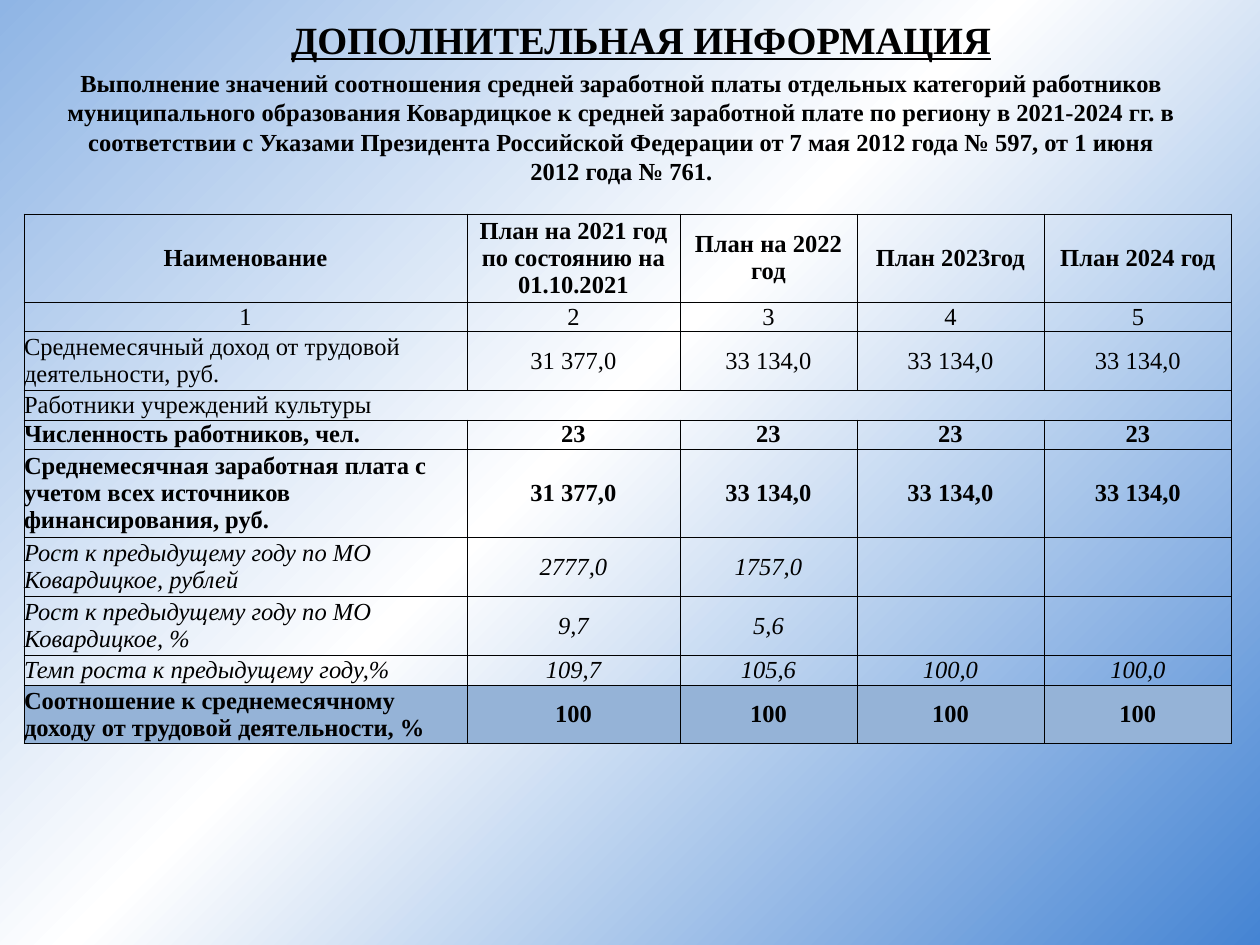
import copy
from dataclasses import dataclass

import pptx
import pptx.dml.color
import pptx.enum.text
import pptx.oxml
import pptx.oxml.ns
import pptx.util

Align = pptx.enum.text.PP_ALIGN
Anchor = pptx.enum.text.MSO_ANCHOR
Rgb = pptx.dml.color.RGBColor.from_string
Pt = pptx.util.Pt


@dataclass(frozen=True)
class Theme:
    font: str = "Times New Roman"
    ink: str = "000000"
    band: str = "95B3D7"
    glow: tuple = ((0, "8FB5E5"), (0.46, "FFFFFF"), (1, "4584D3"))
    head: int = 22
    text: int = 14
    lead: float = 16.75
    tight: float = 15.4
    rule: float = 0.5


@dataclass(frozen=True)
class Row:
    cells: tuple
    lines: int = 1
    bold: bool = False
    slant: bool = False
    mid: bool = False
    span: bool = False
    fill: str = ""


THEME = Theme()
COLS = (443, 213, 177, 187, 188)
TALL = 530  # height of the whole table, shared out by text lines
PLAN = ("31 377,0",) + ("33 134,0",) * 3
ROWS = (
    Row(("Наименование", "План на 2021 год по состоянию на 01.10.2021",
         "План на 2022 год", "План 2023год", "План 2024 год"),
        lines=3, bold=True, mid=True),
    Row(("1", "2", "3", "4", "5"), mid=True),
    Row(("Среднемесячный доход от трудовой деятельности, руб.", *PLAN), lines=2),
    Row(("Работники учреждений культуры",), span=True),
    Row(("Численность работников, чел.",) + ("23",) * 4, bold=True),
    Row(("Среднемесячная заработная плата с учетом всех источников "
         "финансирования, руб.", *PLAN), lines=3, bold=True),
    Row(("Рост к предыдущему году по МО Ковардицкое, рублей",
         "2777,0", "1757,0"), lines=2, slant=True),
    Row(("Рост к предыдущему году по МО Ковардицкое, %", "9,7", "5,6"),
        lines=2, slant=True),
    Row(("Темп роста к предыдущему году,%", "109,7", "105,6", "100,0", "100,0"),
        slant=True),
    Row(("Соотношение к среднемесячному доходу от трудовой деятельности, %",)
        + ("100",) * 4, lines=2, bold=True, fill=THEME.band),
)


def px(size: float) -> int:
    return round(size * 914400 / 126)


def write(frame, text: str, size: int, align, bold=False, slant=False,
          line=False, lead=None) -> None:
    """Set one paragraph of text and format it."""
    frame.word_wrap = True
    frame.text = text
    para = frame.paragraphs[0]
    para.alignment = align
    if lead:
        para.line_spacing = Pt(lead)
    for run in para.runs:
        font = run.font
        font.name, font.size = THEME.font, Pt(size)
        font.bold, font.italic, font.underline = bold, slant, line
        font.color.rgb = Rgb(THEME.ink)


def paint(slide) -> None:
    """Fill the background with a diagonal gradient."""
    fill = slide.background.fill
    fill.gradient()
    fill.gradient_angle = 315
    stops = slide.element.xpath(".//a:gsLst")[0]
    stops.insert(1, copy.deepcopy(stops[0]))
    for stop, (spot, tone) in zip(fill.gradient_stops, THEME.glow):
        stop.position = spot
        stop.color.rgb = Rgb(tone)


def frame_cell(cell) -> None:
    """Draw a thin line on each side of a cell."""
    props = cell._tc.get_or_add_tcPr()
    for side in "LRTB":
        props.append(pptx.oxml.parse_xml(
            f'<a:ln{side} {pptx.oxml.ns.nsdecls("a")} w="{Pt(THEME.rule)}">'
            f'<a:solidFill><a:srgbClr val="{THEME.ink}"/></a:solidFill>'
            f'</a:ln{side}>'))


def fill_row(cells, row: Row) -> None:
    for spot, cell in enumerate(cells):
        frame_cell(cell)
        if row.fill:
            cell.fill.solid()
            cell.fill.fore_color.rgb = Rgb(row.fill)
        else:
            cell.fill.background()
        cell.margin_left = cell.margin_right = 0
        cell.margin_top = cell.margin_bottom = 0
        cell.vertical_anchor = Anchor.MIDDLE
        if spot < len(row.cells):
            align = Align.CENTER if spot or row.mid else Align.LEFT
            write(cell.text_frame, row.cells[spot], THEME.text, align,
                  row.bold, row.slant, lead=THEME.tight)
    if row.span:
        cells[0].merge(cells[-1])


def add_grid(slide) -> None:
    table = slide.shapes.add_table(len(ROWS), len(COLS), px(24), px(214),
                                   px(sum(COLS)), px(TALL)).table
    table.first_row = table.horz_banding = False
    for col, width in zip(table.columns, COLS):
        col.width = px(width)
    total = sum(row.lines for row in ROWS)
    for spot, row in enumerate(ROWS):
        table.rows[spot].height = px(TALL * row.lines / total)
        fill_row(list(table.rows[spot].cells), row)


def main() -> None:
    deck = pptx.Presentation()
    deck.slide_width, deck.slide_height = px(1260), px(945)
    slide = deck.slides.add_slide(deck.slide_layouts[5])
    paint(slide)

    # Title
    title = slide.shapes.title
    title.left, title.top, title.width, title.height = map(px, (74, 16, 1134, 46))
    title.text_frame.vertical_anchor = Anchor.MIDDLE
    title.text_frame.auto_size = pptx.enum.text.MSO_AUTO_SIZE.NONE
    write(title.text_frame, "ДОПОЛНИТЕЛЬНАЯ ИНФОРМАЦИЯ", THEME.head,
          Align.CENTER, bold=True, line=True)

    # Lead text
    lead = slide.shapes.add_textbox(*map(px, (54, 62, 1135, 131)))
    write(lead.text_frame,
          "Выполнение значений соотношения средней заработной платы отдельных "
          "категорий работников муниципального образования Ковардицкое к средней "
          "заработной плате по региону в 2021-2024 гг. в соответствии с Указами "
          "Президента Российской Федерации от 7 мая 2012 года № 597, от 1 июня "
          "2012 года № 761.",
          THEME.text, Align.CENTER, bold=True, lead=THEME.lead)

    # Pay table
    add_grid(slide)
    deck.save("out.pptx")


if __name__ == "__main__":
    main()
